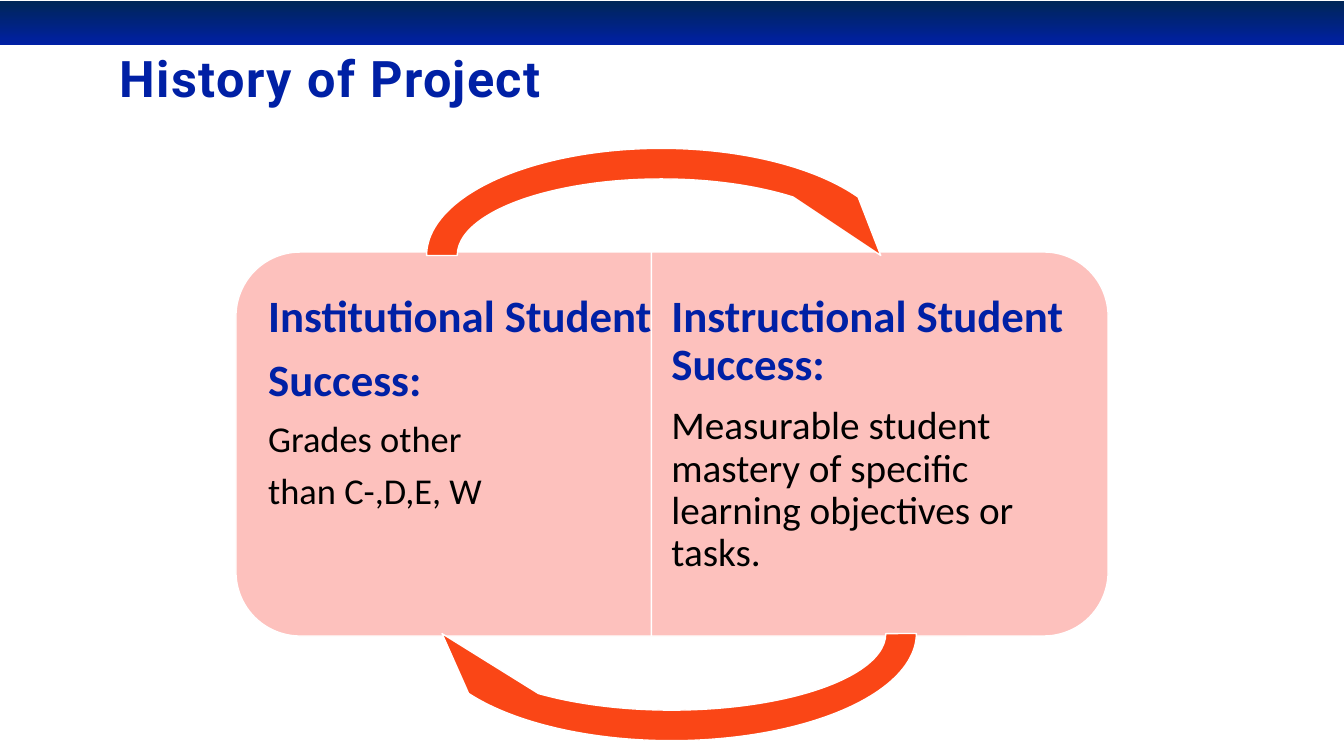
"""Build the History of Project slide with its two-panel success cycle."""
from dataclasses import dataclass

from pptx import Presentation
from pptx.dml.color import RGBColor
from pptx.enum.shapes import MSO_SHAPE
from pptx.enum.text import MSO_ANCHOR
from pptx.util import Inches, Pt

RECT = MSO_SHAPE.RECTANGLE
PANEL = MSO_SHAPE.ROUND_2_SAME_RECTANGLE
ARROW = MSO_SHAPE.CIRCULAR_ARROW
TOP, BOTTOM = MSO_ANCHOR.TOP, MSO_ANCHOR.BOTTOM

COLORS = {"navy": "002657", "blue": "0020A5", "pink": "FDC1BD",
          "orange": "FA4616", "white": "FFFFFF", "black": "000000"}
PANEL_ADJ = (0.167, 0)
ARROW_ADJ = (0.125, 11.423, 204.577, 108, 0.125)

Box = tuple[float, float, float, float]


@dataclass
class Form:
    kind: MSO_SHAPE
    box: Box
    turn: int
    color: str
    adjust: tuple[float, ...]


@dataclass
class Line:
    text: str
    size: int
    color: str = "black"
    bold: bool = False
    font: str = "Calibri"
    after: float = 0.35


@dataclass
class Block:
    box: Box
    inset: Box
    lines: list[Line]
    anchor: MSO_ANCHOR = TOP
    track: int = 0


PANELS = [
    Form(PANEL, (4.38, 0.46, 3.81, 7.89), 270, "pink", PANEL_ADJ),
    Form(PANEL, (6.82, 2.14, 3.81, 4.53), 90, "pink", PANEL_ADJ),
]
ARROWS = [
    Form(ARROW, (4.08, 1.32, 4.96, 2.43), 0, "orange", ARROW_ADJ),
    Form(ARROW, (4.08, 5.07, 5.16, 2.43), 180, "orange", ARROW_ADJ),
]
BLOCKS = [
    Block((1.19, 0.29, 11.86, 0.79), (0, 0, 0, 0),
          [Line("History of Project", 36, "blue", True, "Roboto", 0)], BOTTOM, 100),
    Block((2.53, 2.69, 7.7, 3.44), (0.13, 0.22, 0.2, 0.22), [
        Line("Institutional Student", 32, "blue", True),
        Line("Success:", 32, "blue", True),
        Line("Grades other", 26),
        Line("than C-,D,E, W", 26),
    ]),
    Block((6.46, 2.69, 4.34, 3.44), (0.2, 0.22, 0.13, 0.22), [
        Line("Instructional Student Success:", 32, "blue", True),
        Line("Measurable student mastery of specific learning objectives or tasks.", 28),
    ]),
]


def tint(name: str) -> RGBColor:
    return RGBColor.from_string(COLORS[name])


def draw_band(slide) -> None:
    band = slide.shapes.add_shape(RECT, 0, Inches(0.01), Inches(13.33), Inches(0.44))
    band.shadow.inherit = False
    band.line.fill.background()
    band.fill.gradient()
    band.fill.gradient_angle = 270
    for stop, place, name in zip(band.fill.gradient_stops, (0, 1), ("navy", "blue")):
        stop.position = place
        stop.color.rgb = tint(name)


def draw_form(slide, form: Form) -> None:
    shape = slide.shapes.add_shape(form.kind, *map(Inches, form.box))
    shape.shadow.inherit = False
    shape.rotation = form.turn
    for index, value in enumerate(form.adjust):
        shape.adjustments[index] = value
    shape.fill.solid()
    shape.fill.fore_color.rgb = tint(form.color)
    shape.line.color.rgb = tint("white")
    shape.line.width = Pt(1)


def draw_block(slide, block: Block) -> None:
    frame = slide.shapes.add_textbox(*map(Inches, block.box)).text_frame
    frame.word_wrap = True
    frame.vertical_anchor = block.anchor
    (frame.margin_left, frame.margin_top,
     frame.margin_right, frame.margin_bottom) = map(Inches, block.inset)
    for index, line in enumerate(block.lines):
        para = frame.add_paragraph() if index else frame.paragraphs[0]
        run = para.add_run()
        run.text = line.text
        if block.track:
            run._r.get_or_add_rPr().set("spc", str(block.track))
        para.line_spacing = 0.9
        para.space_after = Pt(line.size * line.after)
        font = para.font
        font.name, font.size, font.bold = line.font, Pt(line.size), line.bold
        font.color.rgb = tint(line.color)


def main() -> None:
    deck = Presentation()
    deck.slide_width, deck.slide_height = Inches(13.33), Inches(7.5)
    slide = deck.slides.add_slide(deck.slide_layouts[6])
    draw_band(slide)
    for form in PANELS + ARROWS:
        draw_form(slide, form)
    for block in BLOCKS:
        draw_block(slide, block)
    deck.save("out.pptx")


if __name__ == "__main__":
    main()
